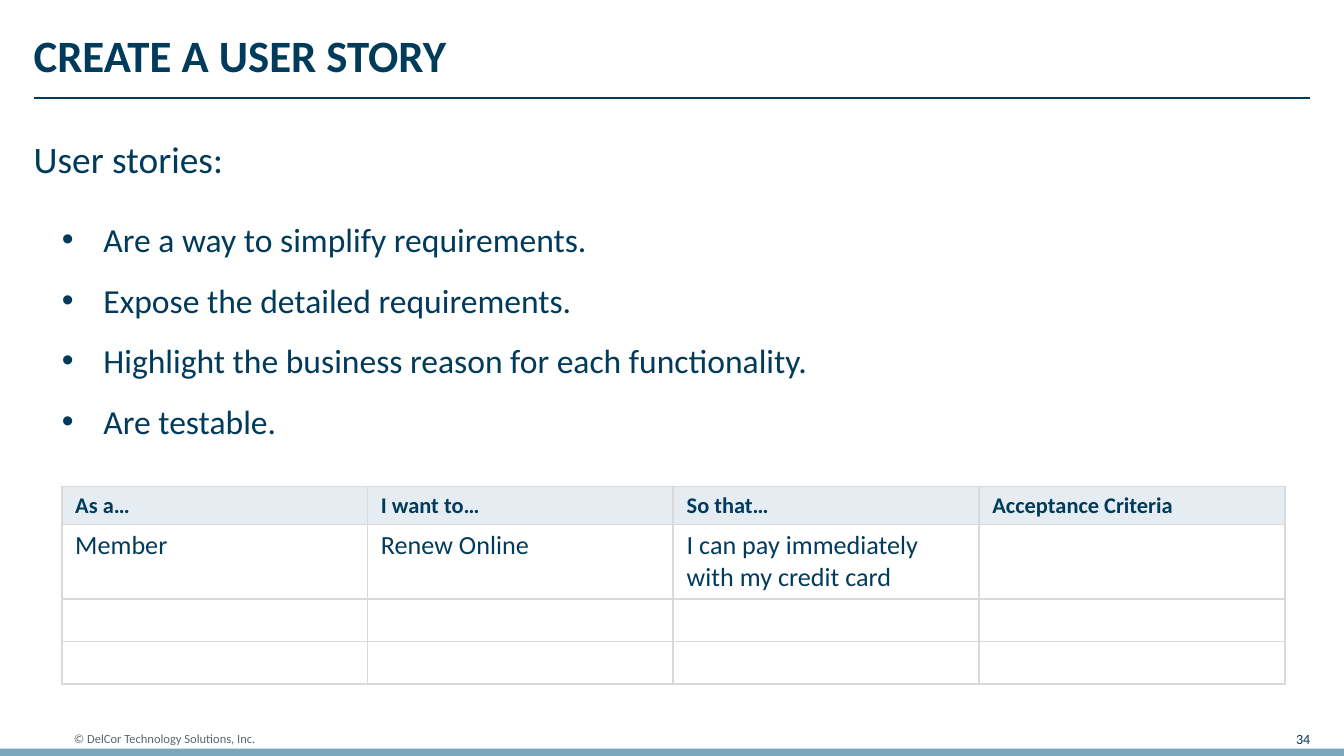
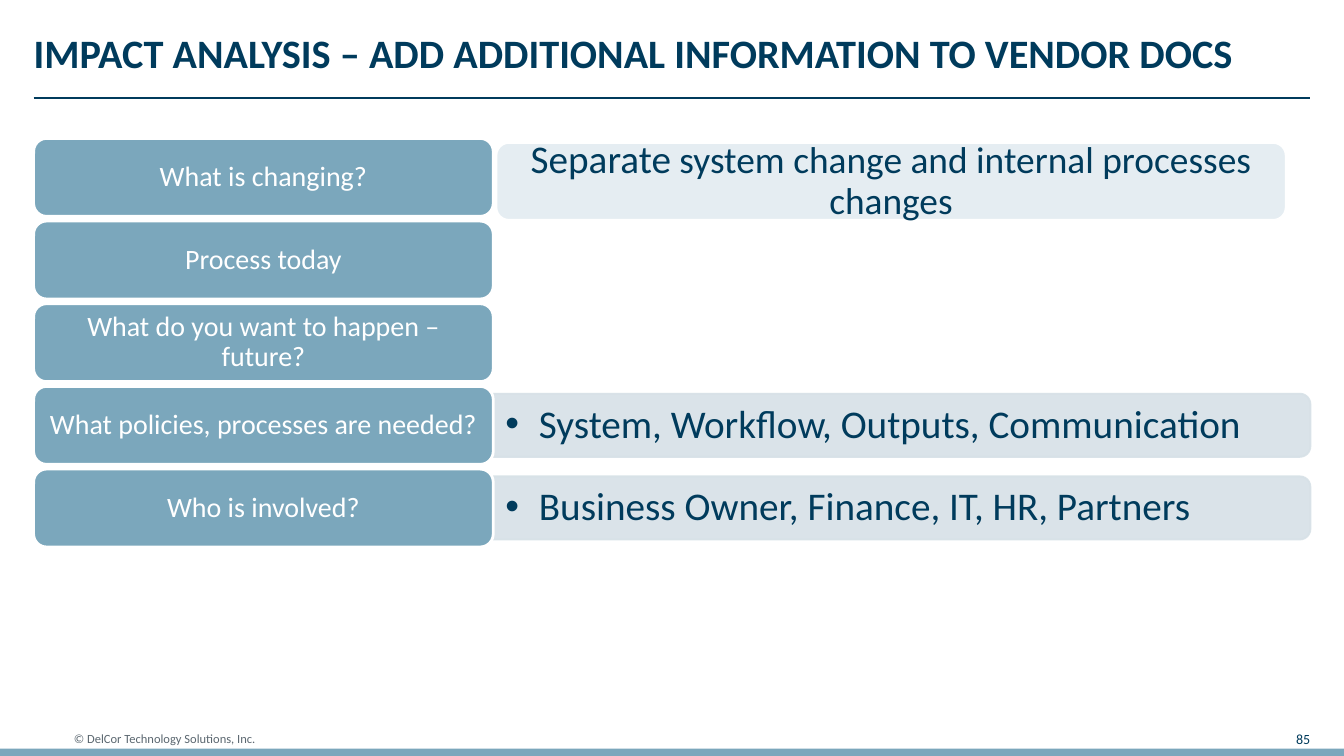
from lxml import etree
from pptx import Presentation
from pptx.dml.color import RGBColor
from pptx.enum.shapes import MSO_CONNECTOR, MSO_SHAPE
from pptx.enum.text import MSO_ANCHOR, MSO_AUTO_SIZE, PP_ALIGN
from pptx.oxml.ns import qn
from pptx.util import Inches, Pt

LEFT, CENTER, RIGHT = PP_ALIGN.LEFT, PP_ALIGN.CENTER, PP_ALIGN.RIGHT
TOP, MIDDLE = MSO_ANCHOR.TOP, MSO_ANCHOR.MIDDLE
NO_AUTOFIT = MSO_AUTO_SIZE.NONE
RECTANGLE, ROUNDED = MSO_SHAPE.RECTANGLE, MSO_SHAPE.ROUNDED_RECTANGLE
ROUNDED_TOP = MSO_SHAPE.ROUND_2_SAME_RECTANGLE
STRAIGHT = MSO_CONNECTOR.STRAIGHT

FONT = "Calibri"
NAVY, BLUE, GRAY, WHITE = "003B5C", "7BA7BC", "5B6770", "FFFFFF"
PALE_BLUE, BAND_BLUE, BORDER_GRAY = "E5EDF2", "D7E1E7", "D9D9D9"

SLIDE_WIDTH = 10
SLIDE_HEIGHT = SLIDE_WIDTH * 9 / 16
MARGIN = 0.25
TITLE_LAYOUT_WITH_BODY, TITLE_LAYOUT_ONLY = 1, 5

# Impact analysis grid
ROW_TOP, LAST_ROW_TOP = 1.03, 3.49
PILL_WIDTH, PILL_HEIGHT = 3.42, 0.58
BAND_LENGTH, BAND_HEIGHT = 6.08, 0.47

USER_STORY_TRAITS = [
    "Are a way to simplify requirements.",
    "Expose the detailed requirements.",
    "Highlight the business reason for each functionality.",
    "Are testable.",
]
USER_STORY_TABLE = [
    ["As a…", "I want to…", "So that…", "Acceptance Criteria"],
    ["Member", "Renew Online", "I can pay immediately with my credit card", ""],
    [""] * 4,
    [""] * 4,
]
ROW_HEIGHTS = [0.28, 0.55, 0.31, 0.31]
IMPACT_ROWS = [
    ("What is changing?", None),
    ("Process today", None),
    ("What do you want to happen – future?", None),
    ("What policies, processes are needed?", "System, Workflow, Outputs, Communication"),
    ("Who is involved?", "Business Owner, Finance, IT, HR, Partners"),
]


def rgb(color):
    return RGBColor.from_string(color)


def inches(*lengths):
    return [Inches(length) for length in lengths]


def apply(target, values):
    for name, value in values.items():
        setattr(target, name, value)


def add_bullet(paragraph, indent):
    properties = paragraph._p.get_or_add_pPr()
    properties.set("marL", str(Inches(indent)))
    properties.set("indent", str(-Inches(indent)))
    etree.SubElement(properties, qn("a:buFont"), typeface="Arial")
    etree.SubElement(properties, qn("a:buChar"), char="•")


def add_run(paragraph, text, size, color, bold):
    run = paragraph.add_run()
    run.text = text
    apply(run.font, {"name": FONT, "size": Pt(size), "bold": bold})
    run.font.color.rgb = rgb(color)


def write_text(frame, paragraphs, size, color=NAVY, bold=False, align=LEFT, anchor=TOP,
               insets=(0, 0), spacing=1.0, after=0, bullet_indent=None):
    """Each paragraph is a string or a list of (text, size) runs."""
    horizontal, vertical = inches(*insets)
    apply(frame, {
        "word_wrap": True, "auto_size": NO_AUTOFIT, "vertical_anchor": anchor,
        "margin_left": horizontal, "margin_right": horizontal,
        "margin_top": vertical, "margin_bottom": vertical,
    })
    for index, content in enumerate(paragraphs):
        paragraph = frame.add_paragraph() if index else frame.paragraphs[0]
        if bullet_indent:
            add_bullet(paragraph, bullet_indent)
        apply(paragraph, {"alignment": align, "line_spacing": spacing,
                          "space_before": Pt(0), "space_after": Pt(after)})
        runs = [(content, size)] if isinstance(content, str) else content
        for text, run_size in runs:
            add_run(paragraph, text, run_size, color, bold)


def add_text(slide, box, paragraphs, size, **style):
    textbox = slide.shapes.add_textbox(*inches(*box))
    write_text(textbox.text_frame, paragraphs, size, **style)


def fill_placeholder(placeholder, box, paragraphs, size, **style):
    apply(placeholder, dict(zip(("left", "top", "width", "height"), inches(*box))))
    write_text(placeholder.text_frame, paragraphs, size, **style)


def add_block(slide, kind, box, fill, line=None, line_width=1.5):
    shape = slide.shapes.add_shape(kind, *inches(*box))
    shape.shadow.inherit = False
    shape.fill.solid()
    shape.fill.fore_color.rgb = rgb(fill)
    if line:
        shape.line.color.rgb = rgb(line)
        shape.line.width = Pt(line_width)
    else:
        shape.line.fill.background()
    return shape


def add_pill(slide, box, content, size, fill, color, insets):
    pill = add_block(slide, ROUNDED, box, fill, WHITE)
    write_text(pill.text_frame, [content], size, color=color, align=CENTER,
               anchor=MIDDLE, insets=insets, spacing=0.9)


def add_band(slide, left, middle, text):
    """A translucent band with its right-hand corners rounded, and a bullet on it."""
    box = (left + (BAND_LENGTH - BAND_HEIGHT) / 2, middle - BAND_LENGTH / 2,
           BAND_HEIGHT, BAND_LENGTH)
    band = add_block(slide, ROUNDED_TOP, box, BAND_BLUE, BAND_BLUE, 1)
    band.rotation = 90
    for color in band._element.spPr.iter(qn("a:srgbClr")):
        etree.SubElement(color, qn("a:alpha"), val="90000")
    add_text(slide, (left, middle - 0.21, BAND_LENGTH - 0.02, 0.42), [text], 21,
             anchor=MIDDLE, insets=(0.09, 0.04), spacing=0.9, bullet_indent=0.25)


def set_borders(cell, color, width):
    properties = cell._tc.get_or_add_tcPr()
    for side in ("lnL", "lnR", "lnT", "lnB"):
        line = etree.SubElement(properties, qn(f"a:{side}"), w=str(Pt(width)))
        fill = etree.SubElement(line, qn("a:solidFill"))
        etree.SubElement(fill, qn("a:srgbClr"), val=color)


def fill_cell(cell, text, is_header):
    size = 12 if is_header else 14
    set_borders(cell, BORDER_GRAY, 1)
    if is_header:
        cell.fill.solid()
        cell.fill.fore_color.rgb = rgb(PALE_BLUE)
    else:
        cell.fill.background()
    apply(cell, {"margin_left": Inches(0.1), "margin_right": Inches(0.1),
                 "margin_top": Inches(0.04), "margin_bottom": Inches(0.04)})
    paragraph = cell.text_frame.paragraphs[0]
    if text:
        add_run(paragraph, text, size, NAVY, is_header)
    else:
        # Keeps an empty row at the height of its text size
        etree.SubElement(paragraph._p, qn("a:endParaRPr"), sz=str(size * 100))


def add_table(slide, left, top, width, rows, row_heights):
    columns = len(rows[0])
    frame = slide.shapes.add_table(len(rows), columns,
                                   *inches(left, top, width, sum(row_heights)))
    table = frame.table
    apply(table, {"first_row": False, "horz_banding": False})
    for column in table.columns:
        column.width = Inches(width / columns)
    for row_index, texts in enumerate(rows):
        table.rows[row_index].height = Inches(row_heights[row_index])
        for column_index, text in enumerate(texts):
            fill_cell(table.cell(row_index, column_index), text, row_index == 0)


def add_slide(presentation, layout, title, title_size, number):
    """A slide with the shared bottom band, footer, rule and title."""
    slide = presentation.slides.add_slide(presentation.slide_layouts[layout])
    add_block(slide, RECTANGLE, (0, 5.57, SLIDE_WIDTH, 0.09), BLUE)
    add_text(slide, (0.55, 5.41, 1.92, 0.17), ["© DelCor Technology Solutions, Inc."],
             6.75, color=GRAY, anchor=MIDDLE)
    add_text(slide, (9.39, 5.41, 0.36, 0.17), [str(number)], 7.5,
             align=RIGHT, anchor=MIDDLE)
    rule = slide.shapes.add_connector(
        STRAIGHT, *inches(MARGIN, 0.73, SLIDE_WIDTH - MARGIN, 0.73))
    rule.line.color.rgb = rgb(NAVY)
    rule.line.width = Pt(1)
    etree.SubElement(rule._element.spPr, qn("a:effectLst"))
    fill_placeholder(slide.shapes.title, (MARGIN, 0.25, SLIDE_WIDTH - 2 * MARGIN, 0.48),
                     [title], title_size, bold=True, spacing=0.9)
    return slide


def build_user_story(presentation):
    slide = add_slide(presentation, TITLE_LAYOUT_WITH_BODY, "CREATE A USER STORY", 24, 34)
    add_text(slide, (MARGIN, 1.01, 6.71, 0.48), ["User stories:"], 20, after=4.5)
    fill_placeholder(slide.placeholders[1], (0.46, 1.48, 7.72, 1.21), USER_STORY_TRAITS,
                     18, spacing=1.5, bullet_indent=0.31)
    add_table(slide, 0.46, 3.62, 9.1, USER_STORY_TABLE, ROW_HEIGHTS)


def build_impact_analysis(presentation):
    slide = add_slide(presentation, TITLE_LAYOUT_ONLY,
                      "IMPACT ANALYSIS – ADD ADDITIONAL INFORMATION TO VENDOR DOCS", 21.6, 85)
    # Questions, with answer bands behind them
    row_pitch = (LAST_ROW_TOP - ROW_TOP) / (len(IMPACT_ROWS) - 1)
    for index, (question, answer) in enumerate(IMPACT_ROWS):
        top = ROW_TOP + index * row_pitch
        if answer:
            add_band(slide, MARGIN + PILL_WIDTH, top + PILL_HEIGHT / 2, answer)
        add_pill(slide, (MARGIN, top, PILL_WIDTH, PILL_HEIGHT), question, 15,
                 BLUE, WHITE, (0.06, 0.03))
    # Answer to the first question
    add_pill(slide, (3.69, 1.06, 5.88, PILL_HEIGHT),
             [("Separate", 21), (" system change and internal processes changes", 20)],
             20, PALE_BLUE, NAVY, (0.09, 0.04))


def main():
    presentation = Presentation()
    presentation.slide_width, presentation.slide_height = inches(SLIDE_WIDTH, SLIDE_HEIGHT)
    build_user_story(presentation)
    build_impact_analysis(presentation)
    presentation.save("out.pptx")


if __name__ == "__main__":
    main()
